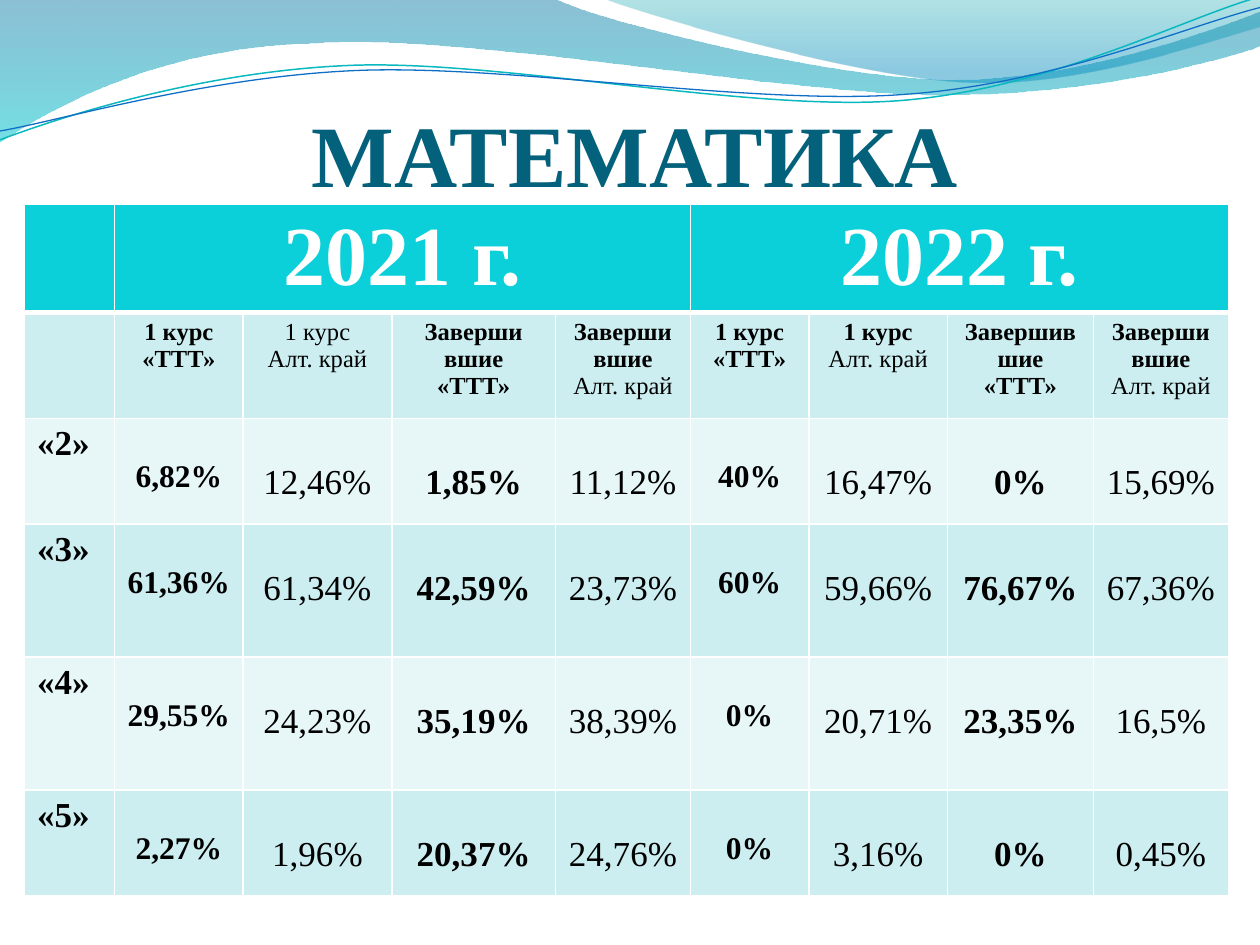
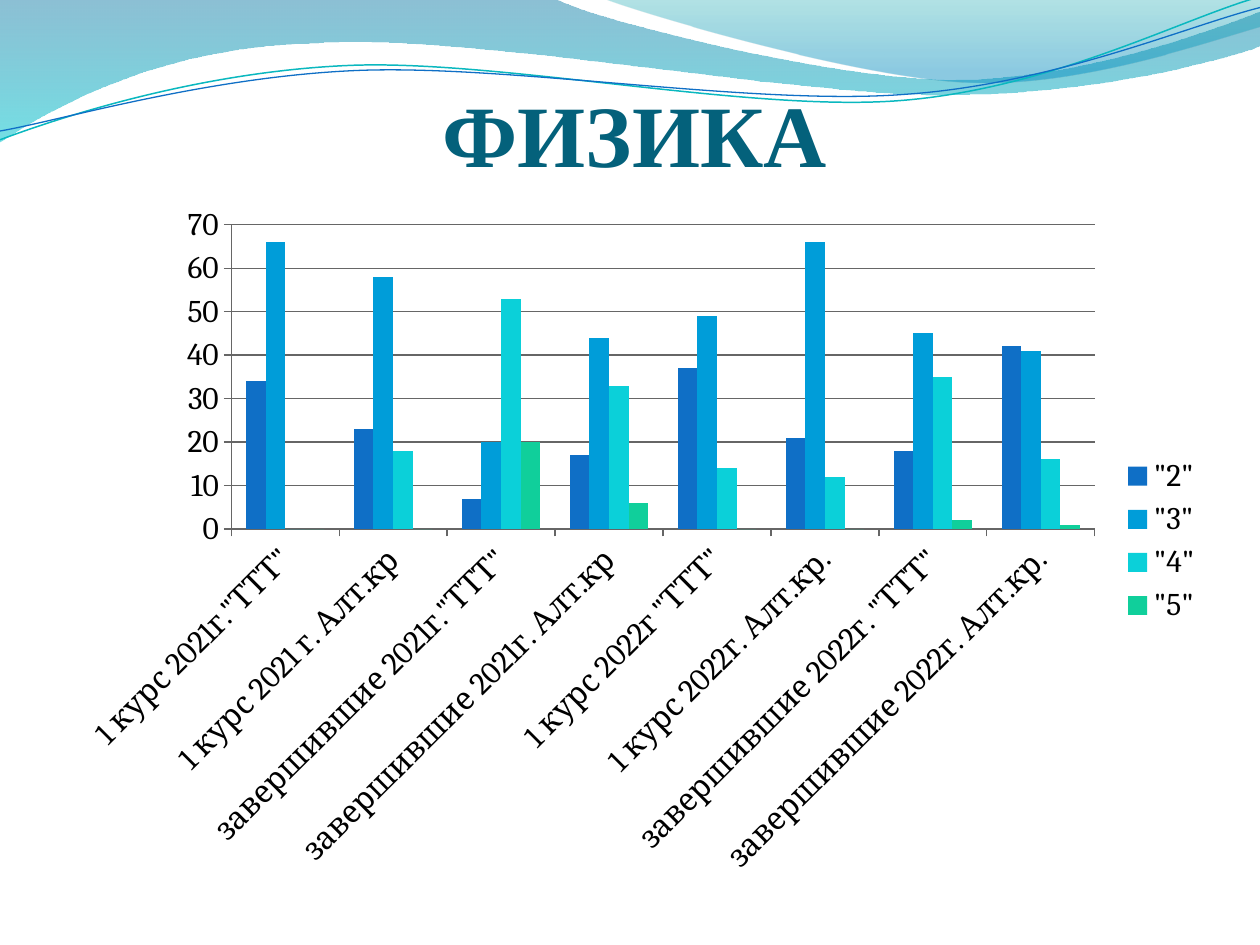
from itertools import cycle
from typing import Any, NamedTuple, Sequence

from lxml.etree import SubElement
from pptx import Presentation
from pptx.chart.data import CategoryChartData as ChartData
from pptx.dml.color import RGBColor
from pptx.enum.chart import XL_CHART_TYPE as Kind
from pptx.enum.chart import XL_LEGEND_POSITION as Side
from pptx.enum.chart import XL_TICK_MARK as Tick
from pptx.enum.text import MSO_ANCHOR as Anchor
from pptx.enum.text import PP_ALIGN as Align
from pptx.oxml.ns import qn
from pptx.util import Inches, Pt

# The slide is a grid of 100 columns by 75 rows.
COLS, ROWS = 100, 75
UNIT = Inches(0.1)

SERIF, BODY = "Times New Roman", "Cambria"
WHITE, BLACK, GREY = "FFFFFF", "000000", "666666"
TITLE, CYAN = "04617B", "0BD0D9"
BANDS = ("CCEEF1", "E7F7F8")
BARS = ("0F6FC6", "009DD9", CYAN, "10CF9B")
LEAD = 1.11  # drop of a value below the cell top, in text sizes

Point = tuple[float, float]


class Box(NamedTuple):
    col: float
    row: float
    cols: float
    rows: float


class Stop(NamedTuple):
    pos: float
    color: str
    alpha: int


class Wave(NamedTuple):
    """A step of two numbers is a straight line, one of six a Bezier curve."""
    start: Point
    steps: Sequence[tuple[float, ...]]
    stops: Sequence[Stop] = ()
    color: str = ""
    width: float = 0


class Line(NamedTuple):
    text: str
    bold: bool = True


class Head(NamedTuple):
    lines: tuple[str, ...]
    bold: int  # how many of the first lines are bold


WAVES = (
    Wave((0, 0),
         ((44, -0.1), (47.6, 1.7, 66.4, 6.3, 75.8, 6.3),
          (85.3, 6.3, 95.8, 2.6, 100, 0.9), (100.1, 3.6),
          (98.3, 4.4, 87, 7.6, 74.6, 7.5), (62.2, 7.5, 38.2, 2.8, 25.7, 3.4),
          (12.9, 3.6, 4.6, 8.3, -0.1, 11.3)),
         stops=(Stop(0, "0074A1", 45), Stop(1, "00C6CF", 55))),
    Wave((47.9, -0.1),
         ((50.9, 1.1, 68.2, 6.2, 76.9, 6.5),
          (85.6, 6.9, 96.1, 3.2, 100, 2.1), (100, 0)),
         stops=(Stop(0, "00A1A9", 30), Stop(0.8, "008BBF", 45))),
    Wave((0, 11.1),
         ((4.8, 9.3, 15.8, 5.7, 27.7, 5.2), (39.5, 4.7, 59.3, 8.9, 71.3, 8),
          (83.3, 7.1, 93.8, 1.5, 99.8, -0.2)),
         color="0AB8BF", width=0.85),
    Wave((0, 10.4),
         ((4.7, 9.6, 16.4, 6.1, 28.3, 5.6), (40.3, 5.1, 59.7, 8.4, 71.7, 7.5),
          (83.6, 6.7, 94.1, 2.1, 100, 0.6)),
         color="0F6FC6", width=0.75),
)

GRID = Box(1.95, 16.2, 95.6, 55.3)
WIDTHS = (7.15, 10.2, 11.8, 13, 10.7, 9.4, 11, 11.6, 10.7)
HEIGHTS = (8.6, 8.4, 8.4, 10.55, 10.55, 8.4)
YEARS = {1: "2021 г.", 5: "2022 г."}
DONE = "Завершившие"
OURS, AREA = "«ТТТ»", "Алт. край"
HEADS = (
    Head(("1 курс", OURS), 2), Head(("1 курс", AREA), 0),
    Head(("Заверши", "вшие", OURS), 3), Head((DONE, AREA), 1),
    Head(("1 курс", OURS), 2), Head(("1 курс", AREA), 1),
    Head((DONE, OURS), 2), Head((DONE, AREA), 1),
)
MARKS = {
    "«2»": "6,82% 12,46% 1,85% 11,12% 40% 16,47% 0% 15,69%",
    "«3»": "61,36% 61,34% 42,59% 23,73% 60% 59,66% 76,67% 67,36%",
    "«4»": "29,55% 24,23% 35,19% 38,39% 0% 20,71% 23,35% 16,5%",
    "«5»": "2,27% 1,96% 20,37% 24,76% 0% 3,16% 0% 0,45%",
}

PLOT = Box(5.14, 15.28, 91.3, 55.3)
GROUPS = (
    '1 курс 2021г."ТТТ"', "1 курс 2021 г. Алт.кр",
    'завершившие 2021г."ТТТ"', "завершившие 2021г. Алт.кр",
    '1 курс 2022г "ТТТ"', "1 курс 2022г. Алт.кр.",
    'завершившие 2022г. "ТТТ"', "завершившие 2022г. Алт.кр.",
)
SCORES = {
    '"2"': (34, 23, 7, 17, 37, 21, 18, 42),
    '"3"': (66, 58, 20, 44, 49, 66, 45, 41),
    '"4"': (0, 18, 53, 33, 14, 12, 35, 16),
    '"5"': (0, 0, 20, 6, 0, 0, 2, 1),
}


def span(size: float) -> int:
    """Turn grid units into a length."""
    return round(size * UNIT)


def rgb(code: str) -> RGBColor:
    return RGBColor.from_string(code)


def apply(obj: Any, style: dict[str, Any]) -> None:
    for name, value in style.items():
        setattr(obj, name, value)


def ink(font: Any, size: float, color: str, bold: bool, face: str = SERIF) -> None:
    apply(font, {"size": Pt(size), "name": face, "bold": bold})
    font.color.rgb = rgb(color)


def paint(fill: Any, color: str) -> None:
    fill.solid()
    fill.fore_color.rgb = rgb(color)


def rule(line: Any, color: str, width: float) -> None:
    line.color.rgb = rgb(color)
    line.width = Pt(width)


def edge(cell: Any, foot: float) -> None:
    """Draw white cell borders, the bottom one as wide as told."""
    props = cell._tc.get_or_add_tcPr()
    for place, (side, width) in enumerate(zip("LRTB", (1, 1, 1, foot))):
        line = SubElement(props, qn(f"a:ln{side}"), w=str(Pt(width)))
        fill = SubElement(line, qn("a:solidFill"))
        SubElement(fill, qn("a:srgbClr"), val=WHITE)
        props.insert(place, line)


def bend(shape: Any, wave: Wave) -> None:
    """Join each three points of a curved step into one Bezier curve."""
    track = next(shape.element.iter(qn("a:path")))
    nodes = iter(track.findall(qn("a:lnTo")))
    for step in wave.steps:
        first, *rest = [next(nodes) for _ in step[::2]]
        if rest:
            arc = SubElement(track, qn("a:cubicBezTo"))
            first.addprevious(arc)
            for node in (first, *rest):
                arc.append(node[0])
                track.remove(node)


def shade(shape: Any, stops: Sequence[Stop]) -> None:
    """Fill from top to bottom with clear colours."""
    fill = shape.fill
    fill.gradient()
    fill.gradient_angle = 270
    for mark, stop in zip(fill.gradient_stops, stops):
        mark.position = stop.pos
        mark.color.rgb = rgb(stop.color)
    for node, stop in zip(shape.element.iter(qn("a:srgbClr")), stops):
        SubElement(node, qn("a:alpha"), val=str(stop.alpha * 1000))


def draw_wave(slide: Any, wave: Wave) -> Any:
    pen = slide.shapes.build_freeform(*map(span, wave.start))
    dots = [(span(x), span(y)) for step in wave.steps
            for x, y in zip(step[::2], step[1::2])]
    pen.add_line_segments(dots, close=bool(wave.stops))
    shape = pen.convert_to_shape()
    bend(shape, wave)
    shape.shadow.inherit = False
    if wave.stops:
        shade(shape, wave.stops)
        shape.line.fill.background()
    else:
        shape.fill.background()
        rule(shape.line, wave.color, wave.width)
    return shape


def set_waves(slide: Any) -> None:
    """Draw the waves and move them to the layout that all slides share."""
    tree = slide.slide_layout.shapes.element
    for place, wave in enumerate(WAVES, 2):
        tree.insert(place, draw_wave(slide, wave).element)


def set_title(slide: Any, text: str, box: Box) -> None:
    title = slide.shapes.title
    apply(title, dict(zip(("left", "top", "width", "height"), map(span, box))))
    frame = title.text_frame
    apply(frame, {"text": text, "word_wrap": True,
                  "vertical_anchor": Anchor.BOTTOM, "margin_left": 0,
                  "margin_right": 0, "margin_top": span(0.5), "margin_bottom": 0})
    para = frame.paragraphs[0]
    para.alignment = Align.CENTER
    ink(para.runs[0].font, 50, TITLE, True)


def write(cell: Any, lines: Sequence[Line], size: float,
          color: str = BLACK, align: Align = Align.CENTER) -> None:
    frame = cell.text_frame
    for i, line in enumerate(lines):
        para = frame.add_paragraph() if i else frame.paragraphs[0]
        para.alignment = align
        run = para.add_run()
        run.text = line.text
        ink(run.font, size, color, line.bold)


def add_marks(slide: Any) -> None:
    table = slide.shapes.add_table(
        len(HEIGHTS), len(WIDTHS), *map(span, GRID)).table
    for col, width in zip(table.columns, WIDTHS):
        col.width = span(width)
    for row, height, color in zip(table.rows, HEIGHTS, (CYAN, *BANDS * 3)):
        row.height = span(height)
        for cell in row.cells:
            paint(cell.fill, color)
            edge(cell, 3 if color == CYAN else 1)

    for col, year in YEARS.items():
        cell = table.cell(0, col)
        cell.merge(table.cell(0, col + 3))
        write(cell, [Line(year)], 48, WHITE)
    for col, head in enumerate(HEADS, 1):
        lines = [Line(text, i < head.bold) for i, text in enumerate(head.lines)]
        write(table.cell(1, col), lines, 14)
    for row, (mark, shares) in enumerate(MARKS.items(), 2):
        write(table.cell(row, 0), [Line(mark)], 20, align=Align.LEFT)
        sizes = cycle((18, 20, 20, 20))
        for col, (share, size) in enumerate(zip(shares.split(), sizes), 1):
            cell = table.cell(row, col)
            cell.margin_top = span(0.5) + Pt(size * LEAD)
            write(cell, [Line(share, col % 2 == 1)], size)


def add_bars(slide: Any) -> None:
    data = ChartData()
    data.categories = GROUPS
    for name, scores in SCORES.items():
        data.add_series(name, scores)
    chart = slide.shapes.add_chart(
        Kind.COLUMN_CLUSTERED, *map(span, PLOT), data).chart
    apply(chart, {"has_title": False, "has_legend": True})
    ink(chart.font, 18, BLACK, False, BODY)
    apply(chart.legend, {"position": Side.RIGHT, "include_in_layout": False})
    plot = chart.plots[0]
    apply(plot, {"gap_width": 150, "overlap": 0, "vary_by_categories": False})
    for bars, color in zip(plot.series, BARS):
        paint(bars.format.fill, color)
        bars.invert_if_negative = False
    ends = chart.category_axis, chart.value_axis
    for axis in ends:
        apply(axis, {"major_tick_mark": Tick.OUTSIDE, "minor_tick_mark": Tick.NONE})
        rule(axis.format.line, GREY, 0.75)
    apply(ends[1], {"minimum_scale": 0, "maximum_scale": 70, "major_unit": 10,
                    "has_major_gridlines": True})
    rule(ends[1].major_gridlines.format.line, GREY, 0.75)


def main() -> None:
    deck = Presentation()
    apply(deck, {"slide_width": span(COLS), "slide_height": span(ROWS)})
    layout = deck.slide_layouts[5]
    maths, physics = (deck.slides.add_slide(layout) for _ in range(2))
    set_waves(maths)
    set_title(maths, "МАТЕМАТИКА", Box(5, 3.66, 90.8, 12.6))
    add_marks(maths)
    set_title(physics, "ФИЗИКА", Box(5, 4.46, 90.8, 10.2))
    add_bars(physics)
    deck.save("out.pptx")


if __name__ == "__main__":
    main()
